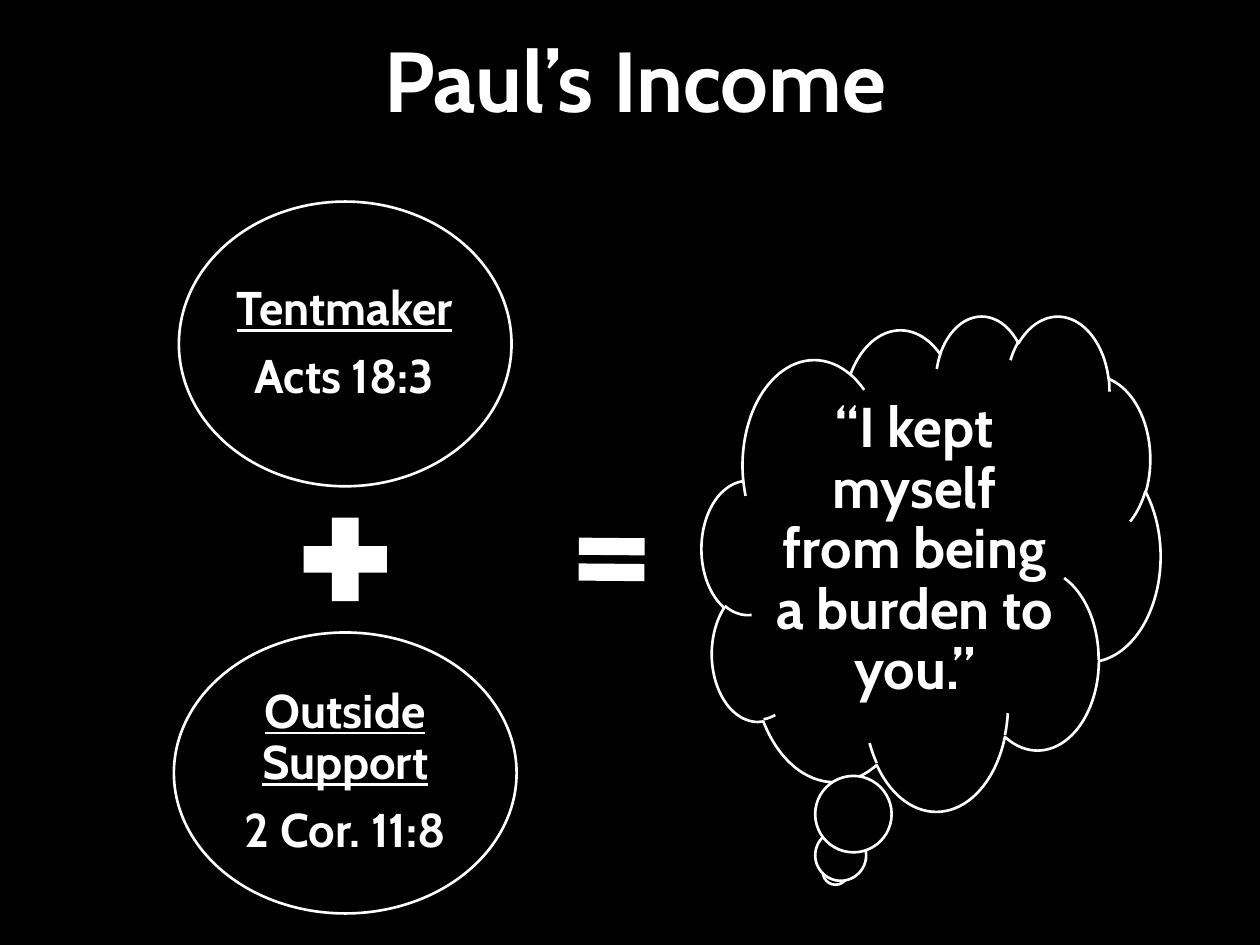
from pptx import Presentation
from pptx.dml.color import RGBColor
from pptx.enum.shapes import MSO_SHAPE as Kind
from pptx.enum.text import MSO_ANCHOR as Anchor, MSO_AUTO_SIZE as Fit, PP_ALIGN as Align
from pptx.util import Inches, Pt

COLORS = {"back": "000000", "ink": "FFFFFF"}
FONT = "Cabin"
TITLE = ("Paul’s Income", (0.69, 0.25, 8.7, 0.83), 48.6)

# kind, shape box, text box, size, lines as (text, underlined)
BUBBLES = [
    (Kind.OVAL, (1.42, 1.6, 2.64, 2.26), (1.8, 1.93, 1.87, 1.6), 27,
     [("Tentmaker", True), ("Acts 18:3", False)]),
    (Kind.OVAL, (1.38, 5.02, 2.72, 2.23), (1.78, 5.34, 1.92, 1.58), 27,
     [("Outside Support", True), ("2 Cor. 11:8", False)]),
    (Kind.CLOUD_CALLOUT, (5.57, 2.5, 3.64, 3.93), (6.07, 3.09, 2.38, 2.56), 32,
     [("“I kept myself from being a burden to you.”", False)]),
]
# kind, box, rotation
SIGNS = [
    (Kind.MATH_PLUS, (2.29, 3.99, 0.9, 0.9), 0),
    (Kind.MATH_EQUAL, (4.5, 4.15, 0.71, 0.58), 0.5),
]


def color(name):
    return RGBColor.from_string(COLORS[name])


def inches(box):
    return [Inches(n) for n in box]


def assign(item, values):
    for name, value in values.items():
        setattr(item, name, value)


def style(para, text, size, under=False, **space):
    run = para.add_run()
    run.text = text
    assign(run.font, {"name": FONT, "size": Pt(size), "bold": True, "underline": under})
    run.font.color.rgb = color("ink")
    assign(para, {"alignment": Align.CENTER, **space})


def draw(slide, kind, box, fill):
    shape = slide.shapes.add_shape(kind, *inches(box))
    shape.shadow.inherit = False
    shape.fill.solid()
    shape.fill.fore_color.rgb = color(fill)
    return shape


def write(slide, box, size, lines):
    frame = slide.shapes.add_textbox(*inches(box)).text_frame
    sides = ("left", "top", "right", "bottom")
    assign(frame, {f"margin_{side}": Inches(0.04) for side in sides})
    assign(frame, {"word_wrap": True, "vertical_anchor": Anchor.MIDDLE})
    for i, (text, under) in enumerate(lines):
        para = frame.add_paragraph() if i else frame.paragraphs[0]
        style(para, text, size, under, line_spacing=0.9, space_after=Pt(0.35 * size))


def main():
    deck = Presentation()
    assign(deck, {"slide_width": Inches(10), "slide_height": Inches(7.5)})
    slide = deck.slides.add_slide(deck.slide_layouts[5])
    slide.background.fill.solid()
    slide.background.fill.fore_color.rgb = color("back")

    text, box, size = TITLE
    title = slide.shapes.title
    assign(title, dict(zip(("left", "top", "width", "height"), inches(box))))
    assign(title.text_frame, {"vertical_anchor": Anchor.BOTTOM, "auto_size": Fit.NONE})
    style(title.text_frame.paragraphs[0], text, size, space_before=Pt(4))

    for kind, box, area, size, lines in BUBBLES:
        shape = draw(slide, kind, box, "back")
        shape.line.color.rgb = color("ink")
        shape.line.width = Pt(1.5)
        write(slide, area, size, lines)

    for kind, box, turn in SIGNS:
        sign = draw(slide, kind, box, "ink")
        sign.line.fill.background()
        sign.rotation = turn

    deck.save("out.pptx")


if __name__ == "__main__":
    main()
